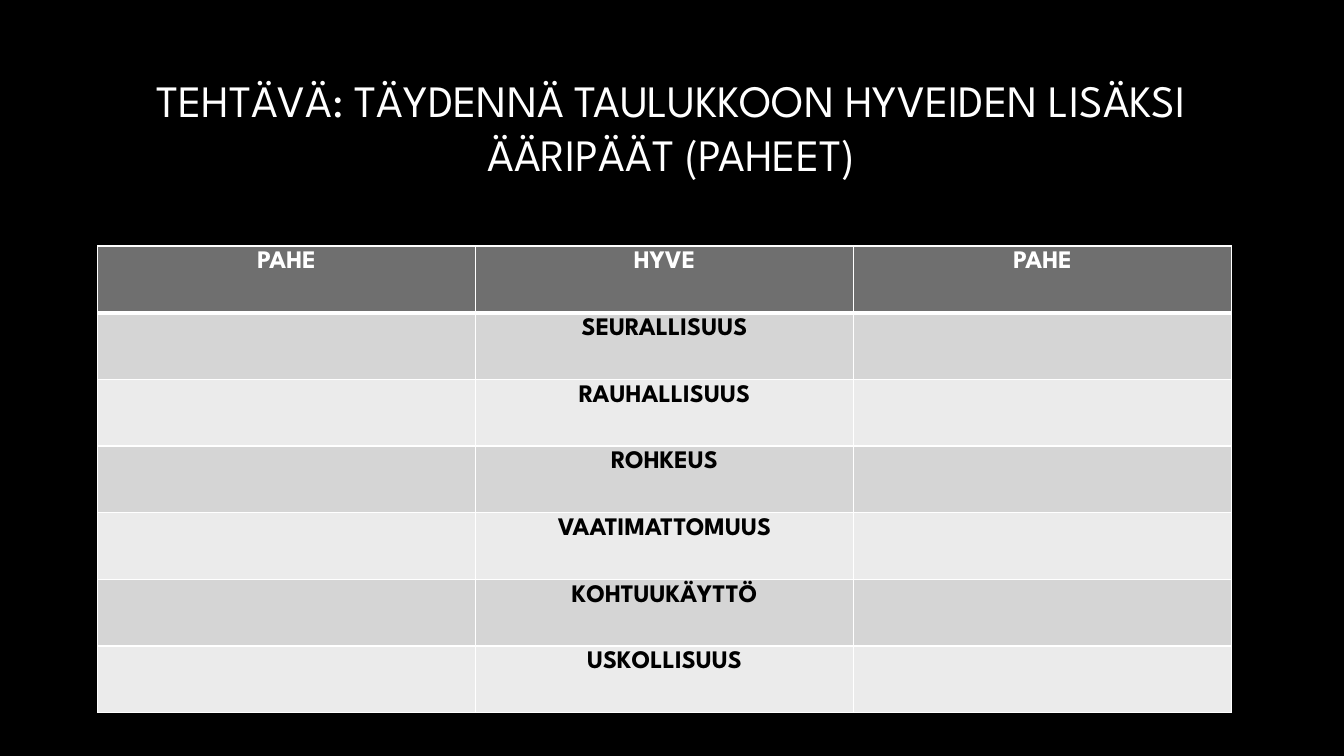
import pptx
import pptx.util
import pptx.dml.color
import pptx.enum.text
import pptx.oxml
import pptx.oxml.ns
from pptx.util import Cm

COLORS = {
    "background": "000000", "title": "FFFFFF", "header": "6F6F6F",
    "header_text": "FFFFFF", "odd": "D5D5D5", "even": "EBEBEB",
    "body_text": "000000", "border": "FFFFFF",
}
VIRTUES = ["SEURALLISUUS", "RAUHALLISUUS", "ROHKEUS",
           "VAATIMATTOMUUS", "KOHTUUKÄYTTÖ", "USKOLLISUUS"]
ROWS = [["PAHE", "HYVE", "PAHE"]] + [["", virtue, ""] for virtue in VIRTUES]
NS = pptx.oxml.ns.nsdecls("a")


def rgb(name):
    return pptx.dml.color.RGBColor.from_string(COLORS[name])


class VirtueSlide:
    font = "League Spartan"

    def __init__(self, prs):
        self.s = prs.slides.add_slide(prs.slide_layouts[6])
        fill = self.s.background.fill
        fill.solid()
        fill.fore_color.rgb = rgb("background")

    def centred_run(self, p, text, color, **formats):
        p.alignment = pptx.enum.text.PP_ALIGN.CENTER
        r = p.add_run()
        r.text = text
        r.font.color.rgb = rgb(color)
        for name, value in {"name": self.font, **formats}.items():
            setattr(r.font, name, value)
        return r

    def title(self, text, *box):
        tf = self.s.shapes.add_textbox(*box).text_frame
        tf.word_wrap = True
        tf.vertical_anchor = pptx.enum.text.MSO_ANCHOR.MIDDLE
        r = self.centred_run(tf.paragraphs[0], text, "title", size=pptx.util.Pt(32))
        shadow = pptx.oxml.parse_xml(
            f'<a:effectLst {NS}><a:outerShdw blurRad="50800" dist="38100" dir="2700000">'
            '<a:srgbClr val="FFFFFF"><a:alpha val="40000"/></a:srgbClr>'
            '</a:outerShdw></a:effectLst>')
        r_pr = r._r.get_or_add_rPr()
        r_pr.find(pptx.oxml.ns.qn("a:solidFill")).addnext(shadow)

    def table(self, rows, left, top, width, height):
        table = self.s.shapes.add_table(
            len(rows), len(rows[0]), left, top, width, height).table
        for i, texts in enumerate(rows):
            fill = ("even", "odd")[i % 2] if i else "header"
            color = "body_text" if i else "header_text"
            for j, text in enumerate(texts):
                cell = table.cell(i, j)
                self.borders(cell, lnT=3 if i == 1 else 1, lnB=1 if i else 3)
                cell.fill.solid()
                cell.fill.fore_color.rgb = rgb(fill)
                if text:
                    self.centred_run(cell.text_frame.paragraphs[0], text, color,
                                     size=pptx.util.Pt(18), bold=True)

    def borders(self, cell, **widths):
        tc_pr = cell._tc.get_or_add_tcPr()
        for tag, points in {"lnL": 1, "lnR": 1, **widths}.items():
            tc_pr.append(pptx.oxml.parse_xml(
                f'<a:{tag} {NS} w="{pptx.util.Pt(points)}"><a:solidFill>'
                f'<a:srgbClr val="{COLORS["border"]}"/></a:solidFill></a:{tag}>'))


def main():
    prs = pptx.Presentation()
    prs.slide_width, prs.slide_height = Cm(33.87), Cm(19.05)
    slide = VirtueSlide(prs)
    slide.title("TEHTÄVÄ: TÄYDENNÄ TAULUKKOON HYVEIDEN LISÄKSI ÄÄRIPÄÄT (PAHEET)",
                Cm(3.18), Cm(0.56), Cm(27.5), Cm(5.28))
    slide.table(ROWS, Cm(2.46), Cm(6.2), Cm(28.58), Cm(11.76))
    prs.save("out.pptx")


if __name__ == "__main__":
    main()
